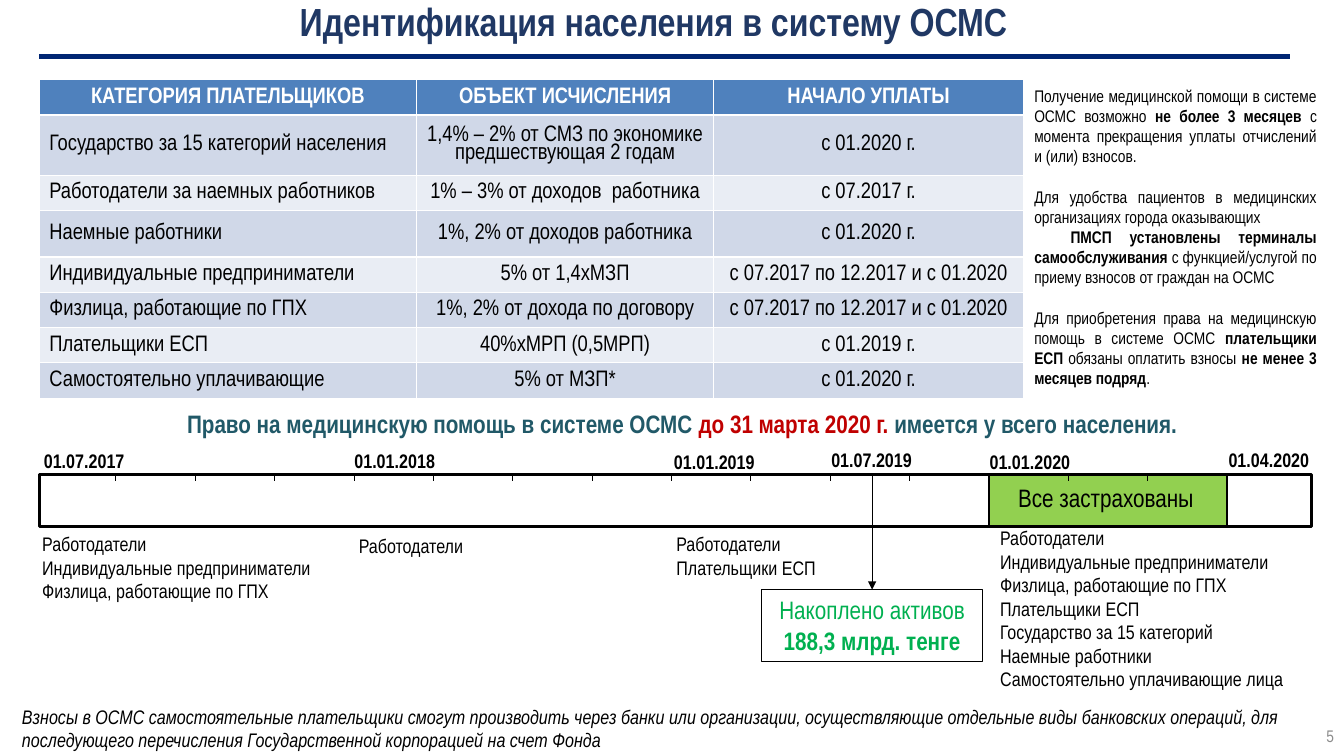
"""Build the slide on enrolling the population in the OSMS insurance system."""
from dataclasses import dataclass
from lxml.etree import SubElement
from pptx import Presentation
from pptx.dml.color import RGBColor
from pptx.enum.shapes import MSO_CONNECTOR, MSO_SHAPE
from pptx.enum.text import MSO_ANCHOR, PP_ALIGN
from pptx.oxml.ns import qn
from pptx.util import Inches, Pt

LEFT, MID, RIGHT, JUST = PP_ALIGN.LEFT, PP_ALIGN.CENTER, PP_ALIGN.RIGHT, PP_ALIGN.JUSTIFY


@dataclass(frozen=True)
class Theme:
    font: str = "Arial Narrow"
    ink: str = "000000"
    white: str = "FFFFFF"
    navy: str = "203864"
    rule: str = "002673"
    teal: str = "215968"
    red: str = "C00000"
    lime: str = "92D050"
    green: str = "00B050"
    gray: str = "8C8C8C"
    head: str = "4F81BD"
    bands: tuple = ("D0D8E8", "E9EDF4")
    title: int = 28
    lead: int = 18
    cell: int = 16
    label: int = 14
    small: int = 12


T = Theme()


def write(frame, paras, size=T.label, color=T.ink, bold=False, italic=False,
          align=LEFT, anchor=MSO_ANCHOR.TOP, wrap=True, space=None, gaps=(), indents=()):
    frame.word_wrap = wrap
    frame.vertical_anchor = anchor
    for i, runs in enumerate(paras):
        para = frame.paragraphs[0] if i == 0 else frame.add_paragraph()
        para.alignment = align
        if space:
            para.line_spacing = space
        if gaps:
            para.space_after = Pt(gaps[i])
        if indents:
            para._p.get_or_add_pPr().set("indent", str(Inches(indents[i])))
        for part in [(runs, {})] if isinstance(runs, str) else runs:
            words, own = part
            run = para.add_run()
            run.text = words
            font = run.font
            font.name, font.size, font.italic = T.font, Pt(size), italic
            font.bold = own.get("bold", bold)
            font.color.rgb = RGBColor.from_string(own.get("color", color))


class Page:
    def __init__(self, deck):
        self.slide = deck.slides.add_slide(deck.slide_layouts[5])
        self.shapes = self.slide.shapes

    def title(self, words, *box):
        head = self.shapes.title
        head.left, head.top, head.width, head.height = map(Inches, box)
        write(head.text_frame, [words], size=T.title, color=T.navy, bold=True,
              align=MID, anchor=MSO_ANCHOR.BOTTOM, space=0.9)

    def text(self, paras, *box, **form):
        write(self.shapes.add_textbox(*map(Inches, box)).text_frame, paras, **form)

    def rect(self, *box, fill=None, width=2):
        shape = self.shapes.add_shape(MSO_SHAPE.RECTANGLE, *map(Inches, box))
        shape.shadow.inherit = False
        if fill:
            shape.fill.solid()
            shape.fill.fore_color.rgb = RGBColor.from_string(fill)
        else:
            shape.fill.background()
        shape.line.color.rgb = RGBColor.from_string(T.ink)
        shape.line.width = Pt(width)
        return shape

    def line(self, *ends, color=T.ink, width=0.75, goal=None):
        link = self.shapes.add_connector(MSO_CONNECTOR.STRAIGHT, *map(Inches, ends))
        link.line.color.rgb = RGBColor.from_string(color)
        link.line.width = Pt(width)
        if goal:
            link.end_connect(goal, 0)
            SubElement(link.line._get_or_add_ln(), qn("a:tailEnd"), type="triangle")
        SubElement(link._element.spPr, qn("a:effectLst"))

    def table(self, rows, widths, heights, *spot):
        box = (*spot, sum(widths), sum(heights))
        grid = self.shapes.add_table(len(rows), len(widths), *map(Inches, box)).table
        for col, wide in zip(grid.columns, widths):
            col.width = Inches(wide)
        for r, (row, high) in enumerate(zip(rows, heights)):
            grid.rows[r].height = Inches(high)
            for c, words in enumerate(row):
                cell = grid.cell(r, c)
                cell.margin_left = cell.margin_right = Inches(0.1)
                cell.margin_top = cell.margin_bottom = Inches(0.04)
                cell.fill.solid()
                cell.fill.fore_color.rgb = RGBColor.from_string(
                    T.bands[(r - 1) % 2] if r else T.head)
                write(cell.text_frame, [words], size=T.cell, bold=r == 0,
                      color=T.ink if r else T.white, align=LEFT if r and c == 0 else MID,
                      space=0.85 if (r, c) == (1, 1) else None)
                cell.vertical_anchor = MSO_ANCHOR.MIDDLE


PAYERS = [
    ("КАТЕГОРИЯ ПЛАТЕЛЬЩИКОВ", "ОБЪЕКТ ИСЧИСЛЕНИЯ", "НАЧАЛО УПЛАТЫ"),
    ("Государство за 15 категорий населения",
     "1,4% – 2% от СМЗ по экономике предшествующая 2 годам", "с 01.2020 г."),
    ("Работодатели за наемных работников", "1% – 3% от доходов  работника", "с 07.2017 г."),
    ("Наемные работники", "1%, 2% от доходов работника", "с 01.2020 г."),
    ("Индивидуальные предприниматели", "5% от 1,4хМЗП", "с 07.2017 по 12.2017 и с 01.2020"),
    ("Физлица, работающие по ГПХ", "1%, 2% от дохода по договору",
     "с 07.2017 по 12.2017 и с 01.2020"),
    ("Плательщики ЕСП", "40%хМРП (0,5МРП)", "с 01.2019 г."),
    ("Самостоятельно уплачивающие", "5% от МЗП*", "с 01.2020 г."),
]
BOLD = {"bold": True}
RULES = [
    [("Получение медицинской помощи в системе ОСМС возможно ", {}),
     ("не более 3 месяцев ", BOLD),
     ("с момента прекращения уплаты отчислений и (или) взносов.", {})],
    "Для удобства пациентов в медицинских организациях города оказывающих",
    [("ПМСП установлены терминалы самообслуживания", BOLD),
     (" с функцией/услугой по приему взносов от граждан на ОСМС", {})],
    [("Для приобретения права на медицинскую помощь в системе ОСМС ", {}),
     ("плательщики ЕСП", BOLD), (" обязаны оплатить взносы ", {}),
     ("не менее 3 месяцев подряд", BOLD), (".", {})],
]
DATES = [("01.07.2017", 0.32, 4.4), ("01.01.2018", 3.4, 4.4), ("01.01.2019", 6.57, 4.41),
         ("01.07.2019", 8.13, 4.39), ("01.01.2020", 9.7, 4.41), ("01.04.2020", 12.07, 4.39)]
STAFF, SOLE, DEAL, UNITED = ("Работодатели", "Индивидуальные предприниматели",
                             "Физлица, работающие по ГПХ", "Плательщики ЕСП")
GROUPS = [
    ([STAFF, SOLE, DEAL], 0.32, 5.23, 3.25, 0.81),
    ([STAFF], 3.46, 5.25, 1.62, 0.34),
    ([STAFF, UNITED], 6.61, 5.23, 1.62, 0.57),
    ([STAFF, SOLE, DEAL, UNITED, "Государство за 15 категорий", "Наемные работники",
      "Самостоятельно уплачивающие лица"], 9.82, 5.17, 3.28, 1.75),
]


def main():
    deck = Presentation()
    deck.slide_width, deck.slide_height = Inches(13.33), Inches(7.5)
    page = Page(deck)
    page.title("Идентификация населения в систему ОСМС", 1.9, 0.02, 9.16, 0.48)
    page.line(0.39, 0.56, 12.79, 0.56, color=T.rule, width=3)
    page.table(PAYERS, (3.74, 2.95, 3.07), (0.35, 0.6, 0.35, 0.46) + (0.35,) * 4, 0.39, 0.79)
    page.text(RULES, 10.16, 0.8, 3, 3.13, size=T.small, align=JUST,
              gaps=(14.4, 0, 14.4, 0), indents=(0, 0, 0.36, 0))
    page.text([[("Право на медицинскую помощь в системе ОСМС ", {}),
                ("до 31 марта 2020 г. ", {"color": T.red}),
                ("имеется у всего населения.", {})]],
              0.52, 4, 12.49, 0.4, size=T.lead, color=T.teal, bold=True, align=MID)

    page.rect(9.81, 4.71, 2.36, 0.51, fill=T.lime)
    page.rect(0.39, 4.71, 12.62, 0.51)
    page.text(["Все застрахованы"], 10, 4.74, 1.97, 0.4, size=T.lead, wrap=False)
    first, last, count = 1.15, 12.17, 15
    for i in range(count):
        x = first + i * (last - first) / (count - 1)
        page.line(x, 4.71, x, 4.77)
    for date, x, y in DATES:
        page.text([date], x, y, 1.03, 0.34, bold=True, align=MID)
    for names, *box in GROUPS:
        page.text(names, *box)

    fund = page.rect(7.55, 5.85, 2.2, 0.71, width=0.75)
    write(fund.text_frame, ["Накоплено активов", [("188,3 млрд. тенге", BOLD)]],
          size=T.lead, color=T.green, align=MID)
    page.line(8.65, 4.72, 8.65, 5.85, goal=fund)
    page.text(["Взносы в ОСМС самостоятельные плательщики смогут производить через банки или "
               "организации, осуществляющие отдельные виды банковских операций, для "
               "последующего перечисления Государственной корпорацией на счет Фонда"],
              0.12, 6.94, 13.04, 0.57, italic=True)
    page.text(["5"], 10.33, 7.1, 3, 0.4, size=T.small, color=T.gray, align=RIGHT,
              anchor=MSO_ANCHOR.MIDDLE)
    deck.save("out.pptx")


if __name__ == "__main__":
    main()
